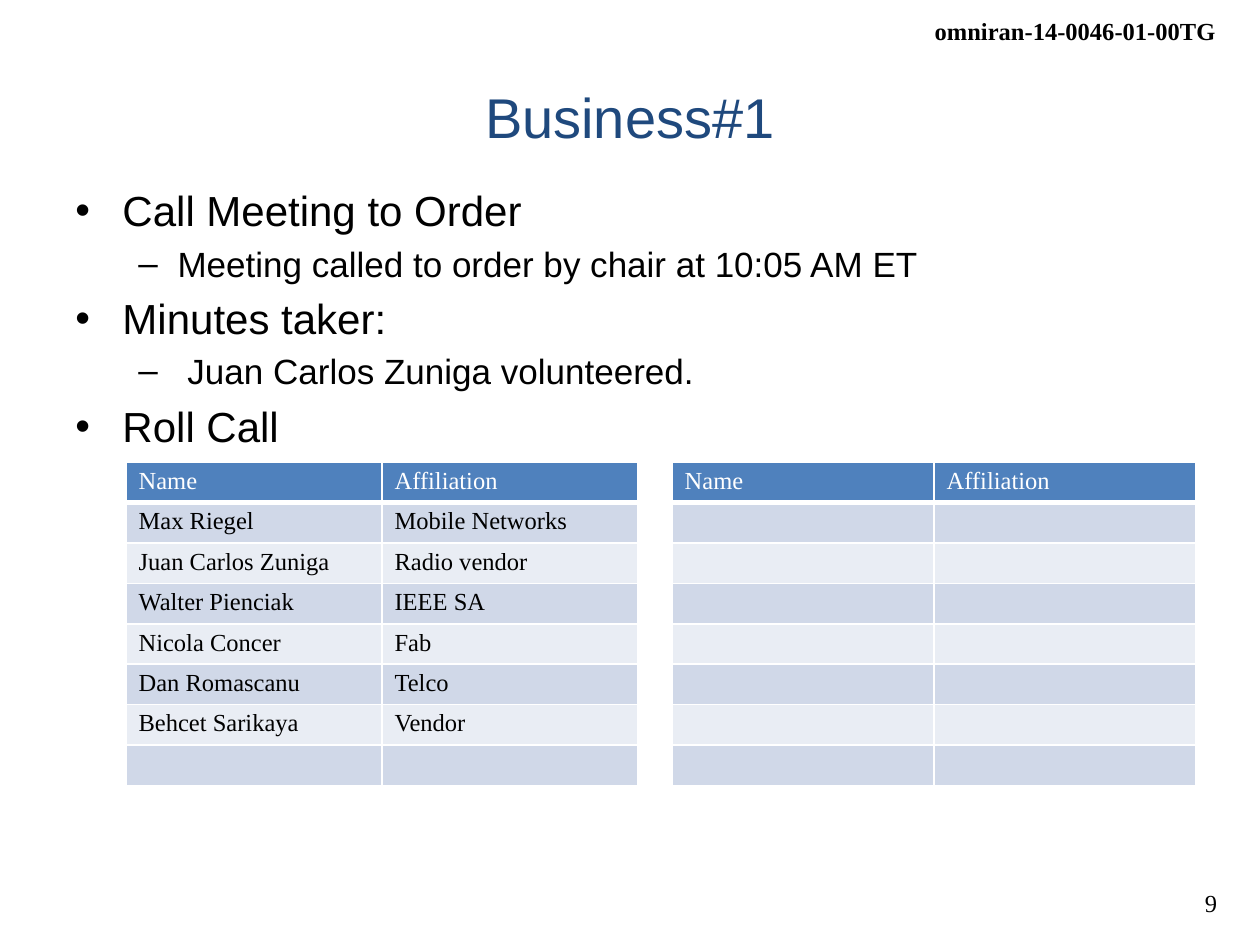
from lxml.etree import SubElement
from pptx import Presentation
from pptx.dml.color import RGBColor
from pptx.enum.text import MSO_ANCHOR, PP_ALIGN
from pptx.oxml import parse_xml
from pptx.oxml.ns import nsdecls, qn
from pptx.util import Cm, Pt

SERIF = {"name": "Times New Roman", "size": Pt(14), "bold": False}
SANS = {"name": "Arial"}
WHITE, BLACK, NAVY, BLUE = "FFFFFF", "000000", "1F497D", "4F81BD"
BANDS = ("D0D8E8", "E9EDF4")

# bullet, text size, text margin (cm), bullet position (cm), space before
LEVELS = {
    "item": ("•", 24, 0.95, 0, 4.8),
    "detail": ("–", 20, 2.06, 1.27, 4),
    "indented": ("–", 20, 2.26, 1.27, 4),
}
AGENDA = [
    ("item", "Call Meeting to Order"),
    ("detail", "Meeting called to order by chair at 10:05 AM ET"),
    ("item", "Minutes taker:"),
    ("indented", "Juan Carlos Zuniga volunteered."),
    ("item", "Roll Call"),
]
ATTENDEES = [
    ("Max Riegel", "Mobile Networks"),
    ("Juan Carlos Zuniga", "Radio vendor"),
    ("Walter Pienciak", "IEEE SA"),
    ("Nicola Concer", "Fab"),
    ("Dan Romascanu", "Telco"),
    ("Behcet Sarikaya", "Vendor"),
    ("", ""),
]
HEADINGS = ("Name", "Affiliation")
COLUMN_WIDTHS = (5.16, 5.16, 0.69, 5.28, 5.28)
GAP_COLUMN = 2
ROW_HEIGHT = 0.81


def color(value):
    return RGBColor.from_string(value)


def format_font(font, values, fill):
    for name, value in values.items():
        setattr(font, name, value)
    font.color.rgb = color(fill)


def add_text_box(slide, box, wrap):
    frame = slide.shapes.add_textbox(*map(Cm, box)).text_frame
    frame.word_wrap = wrap
    return frame


def add_corner_label(slide, box, text, bold=False):
    paragraph = add_text_box(slide, box, False).paragraphs[0]
    paragraph.alignment = PP_ALIGN.RIGHT
    run = paragraph.add_run()
    run.text = text
    format_font(run.font, {**SERIF, "bold": bold}, BLACK)


def place_title(slide, box, text):
    title = slide.shapes.title
    title.left, title.top, title.width, title.height = map(Cm, box)
    title.text_frame.vertical_anchor = MSO_ANCHOR.MIDDLE
    paragraph = title.text_frame.paragraphs[0]
    paragraph.alignment = PP_ALIGN.CENTER
    run = paragraph.add_run()
    run.text = text
    format_font(run.font, {**SANS, "size": Pt(32)}, NAVY)


def add_agenda(slide, box):
    frame = add_text_box(slide, box, True)
    for index, (level, text) in enumerate(AGENDA):
        bullet, size, margin, bullet_left, space = LEVELS[level]
        paragraph = frame.add_paragraph() if index else frame.paragraphs[0]
        properties = paragraph._p.get_or_add_pPr()
        properties.set("marL", str(Cm(margin)))
        properties.set("indent", str(Cm(bullet_left) - Cm(margin)))
        SubElement(properties, qn("a:buFont"), typeface="Arial")
        SubElement(properties, qn("a:buChar"), char=bullet)
        paragraph.space_before = Pt(space if index else 0)
        run = paragraph.add_run()
        run.text = text
        format_font(run.font, {**SANS, "size": Pt(size)}, BLACK)


def add_borders(cell, widths):
    properties = cell._tc.get_or_add_tcPr()
    for index, (side, width) in enumerate(widths.items()):
        properties.insert(index, parse_xml(
            f'<a:ln{side} {nsdecls("a")} w="{Pt(width)}"><a:solidFill>'
            f'<a:srgbClr val="{WHITE}"/></a:solidFill></a:ln{side}>'))


def format_cell(cell, text, fill, text_color, widths):
    cell.margin_top = cell.margin_bottom = Cm(0.11)
    cell.fill.solid()
    cell.fill.fore_color.rgb = color(fill)
    add_borders(cell, widths)
    paragraph = cell.text_frame.paragraphs[0]
    if text:
        run = paragraph.add_run()
        run.text = text
        format_font(run.font, SERIF, text_color)
    else:
        # An empty cell takes its line height from the paragraph end mark
        paragraph._p.get_or_add_endParaRPr().set("sz", "1400")


def add_roll_call(slide, left, top):
    rows = [(*HEADINGS, "", *HEADINGS)]
    rows += [(*attendee, "", "", "") for attendee in ATTENDEES]
    table = slide.shapes.add_table(
        len(rows), len(COLUMN_WIDTHS), Cm(left), Cm(top),
        Cm(sum(COLUMN_WIDTHS)), Cm(ROW_HEIGHT * len(rows))).table
    table.first_row = table.horz_banding = False
    for column, width in zip(table.columns, COLUMN_WIDTHS):
        column.width = Cm(width)
    for row_index, row in enumerate(rows):
        table.rows[row_index].height = Cm(ROW_HEIGHT)
        is_header = row_index == 0
        row_fill = BLUE if is_header else BANDS[(row_index - 1) % 2]
        widths = {"L": 1, "R": 1, "T": 1, "B": 3 if is_header else 1}
        for column_index, text in enumerate(row):
            fill = WHITE if column_index == GAP_COLUMN else row_fill
            format_cell(table.cell(row_index, column_index), text, fill,
                        WHITE if is_header else BLACK, widths)


def main():
    presentation = Presentation()
    presentation.slide_width, presentation.slide_height = Cm(25.4), Cm(19.05)
    slide = presentation.slides.add_slide(presentation.slide_layouts[5])
    add_corner_label(slide, (18.54, 0.2, 6.22, 0.86),
                     "omniran-14-0046-01-00TG", bold=True)
    add_corner_label(slide, (23.7, 17.78, 1.09, 0.86), "9")
    place_title(slide, (1.27, 0.76, 22.86, 3.18), "Business#1")
    add_agenda(slide, (1.27, 3.6, 22.86, 7.19))
    add_roll_call(slide, 2.54, 9.32)
    presentation.save("out.pptx")


if __name__ == "__main__":
    main()
